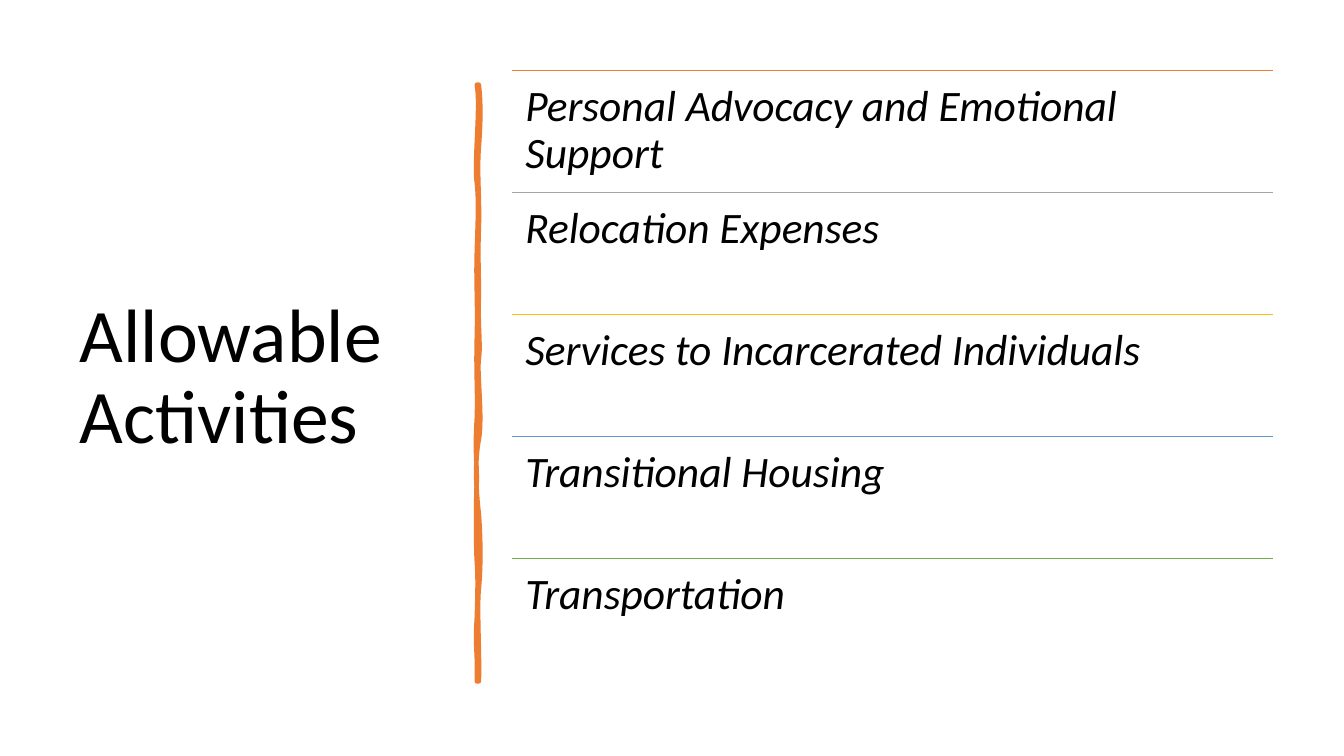
from dataclasses import dataclass

from lxml import etree
from pptx import Presentation
from pptx.dml.color import RGBColor
from pptx.enum import shapes, text
from pptx.oxml import ns
from pptx.util import Pt


@dataclass(frozen=True)
class Theme:
    font: str = "Calibri"
    ink: str = "000000"
    accent: str = "ED7D31"
    rules: tuple = ("ED7D31", "A5A5A5", "FFC000", "5B9BD5", "70AD47")
    title_size: float = 54
    item_size: float = 31
    rule_width: float = 1
    brush_width: float = 3.25


THEME = Theme()

ACTIVITIES = (
    "Personal Advocacy and Emotional Support",
    "Relocation Expenses",
    "Services to Incarcerated Individuals",
    "Transitional Housing",
    "Transportation",
)
LIST_LEFT, LIST_TOP, LIST_WIDTH, ROW_HEIGHT = 365.8, 50.4, 543.6, 87.1

# Brush edges: two control points (x from the axis, y), then the end y.
BRUSH_AXIS, BRUSH_HALF, BRUSH_TOP, BRUSH_BOTTOM = 341.3, 0.72, 60.5, 486.7
RIGHT_EDGE = (
    (2.16, 73.4, 2.16, 85.7, 105.1),
    (-0.72, 124.6, 1.44, 140.4, 162.7),
    (0, 185, 0.72, 188.6, 211.7),
    (0, 234, 2.16, 246.2, 256.3),
    (-0.72, 266.4, 3.6, 298.1, 313.9),
    (-2.16, 329, -1.44, 348.5, 367.2),
    (2.16, 385.9, 2.16, 406.1, 420.5),
    (-0.72, 434.2, 1.44, 468, BRUSH_BOTTOM),
)
LEFT_EDGE = (
    (0, 465.1, -2.16, 463.7, 441.4),
    (0, 419.8, 0, 410.4, 401),
    (-1.44, 391.7, -1.44, 356.4, 343.4),
    (-0.72, 330.5, -2.16, 320.4, 298.8),
    (0, 277.9, -1.44, 268.6, 241.2),
    (0, 214.6, -1.44, 202.3, 180),
    (0, 157, 0.72, 144, 130.3),
    (-2.88, 117.4, 2.16, 74.9, BRUSH_TOP),
)


def rgb(value):
    return RGBColor.from_string(value)


def add_text(s, content, left, top, width, height, *, size, italic=False,
             anchor=text.MSO_ANCHOR.TOP, inset_x=9.4, inset_y=9.4):
    tf = s.shapes.add_textbox(Pt(left), Pt(top), Pt(width), Pt(height)).text_frame
    tf.word_wrap = True
    tf.vertical_anchor = anchor
    tf.margin_left = tf.margin_right = Pt(inset_x)
    tf.margin_top = tf.margin_bottom = Pt(inset_y)
    p = tf.paragraphs[0]
    p.line_spacing = 0.9
    r = p.add_run()
    r.text = content
    r.font.name = THEME.font
    r.font.size = Pt(size)
    r.font.italic = italic
    r.font.color.rgb = rgb(THEME.ink)


def add_rule(s, left, top, width, color):
    line = s.shapes.add_connector(shapes.MSO_CONNECTOR.STRAIGHT, Pt(left), Pt(top),
                                  Pt(left + width), Pt(top))
    line.line.color.rgb = rgb(color)
    line.line.width = Pt(THEME.rule_width)
    etree.SubElement(line._element.spPr, ns.qn("a:effectLst"))


def bend(segment, controls):
    """Turn a straight outline segment into a cubic curve."""
    segment.tag = ns.qn("a:cubicBezTo")
    for i, (x, y) in enumerate(controls):
        pt = etree.Element(ns.qn("a:pt"), x=str(int(x)), y=str(int(y)))
        segment.insert(i, pt)


def add_brush_stroke(s):
    right, left = BRUSH_AXIS + BRUSH_HALF, BRUSH_AXIS - BRUSH_HALF
    joints = [(right, edge[-1]) for edge in RIGHT_EDGE]
    joints.append((left, BRUSH_BOTTOM))
    joints += [(left, edge[-1]) for edge in LEFT_EDGE]
    builder = s.shapes.build_freeform(Pt(right), Pt(BRUSH_TOP))
    builder.add_line_segments([(Pt(x), Pt(y)) for x, y in joints], close=True)
    sp = builder.convert_to_shape()

    segments = list(sp._element.iter(ns.qn("a:lnTo")))
    del segments[len(RIGHT_EDGE)]  # the flat bottom end stays straight
    for segment, (x1, y1, x2, y2, _) in zip(segments, RIGHT_EDGE + LEFT_EDGE):
        bend(segment, [(Pt(BRUSH_AXIS + x) - sp.left, Pt(y) - sp.top)
                       for x, y in ((x1, y1), (x2, y2))])

    sp.shadow.inherit = False
    sp.fill.solid()
    sp.fill.fore_color.rgb = rgb(THEME.accent)
    sp.line.color.rgb = rgb(THEME.accent)
    sp.line.width = Pt(THEME.brush_width)
    etree.SubElement(sp.line._get_or_add_ln(), ns.qn("a:round"))


def main():
    prs = Presentation()
    prs.slide_width, prs.slide_height = Pt(960), Pt(540)
    s = prs.slides.add_slide(prs.slide_layouts[6])
    add_text(s, "Allowable Activities", 50, 50.4, 269.3, 440, size=THEME.title_size,
             anchor=text.MSO_ANCHOR.MIDDLE, inset_x=7.2, inset_y=3.6)
    add_brush_stroke(s)
    for i, (activity, color) in enumerate(zip(ACTIVITIES, THEME.rules)):
        top = LIST_TOP + i * ROW_HEIGHT
        add_rule(s, LIST_LEFT, top, LIST_WIDTH, color)
        add_text(s, activity, LIST_LEFT, top, LIST_WIDTH, ROW_HEIGHT,
                 size=THEME.item_size, italic=True)
    prs.save("out.pptx")


if __name__ == "__main__":
    main()
